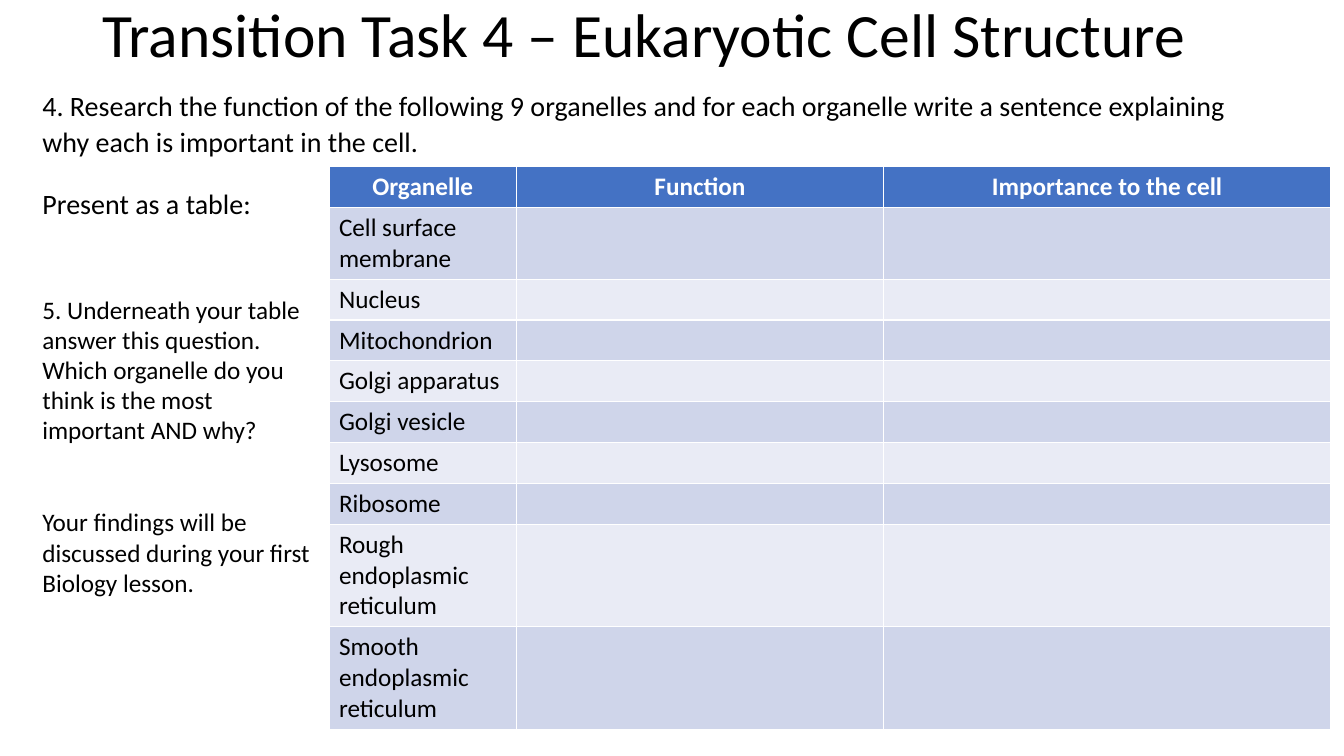
from pptx import Presentation
from pptx.dml.color import RGBColor
from pptx.enum.text import MSO_ANCHOR, PP_ALIGN
from pptx.util import Pt

MIDDLE, TOP = MSO_ANCHOR.MIDDLE, MSO_ANCHOR.TOP
LEFT, CENTER = PP_ALIGN.LEFT, PP_ALIGN.CENTER
FONT = "Calibri"
COLORS = {
    "text": "000000",
    "header_text": "FFFFFF",
    "header": "4472C4",
    "odd_row": "CFD5EA",
    "even_row": "E9EBF5",
}


def write_text(paragraph, text, size=18, color="text", bold=False, align=LEFT,
               line_spacing=1.0, before=0, after=0):
    paragraph.alignment = align
    paragraph.line_spacing = line_spacing
    paragraph.space_before = Pt(before)
    paragraph.space_after = Pt(after)
    run = paragraph.add_run()
    run.text = text
    run.font.name = FONT
    run.font.size = Pt(size)
    run.font.bold = bold
    run.font.color.rgb = RGBColor.from_string(COLORS[color])


def add_text_frame(slide, left, top, width, height, anchor=TOP):
    box = slide.shapes.add_textbox(Pt(left), Pt(top), Pt(width), Pt(height))
    box.text_frame.word_wrap = True
    box.text_frame.vertical_anchor = anchor
    return box.text_frame


presentation = Presentation()
presentation.slide_width = Pt(960)
presentation.slide_height = Pt(540)
slide = presentation.slides.add_slide(presentation.slide_layouts[6])

title = add_text_frame(slide, 66, -25.2, 828, 104.4, anchor=MIDDLE)
write_text(title.paragraphs[0], "Transition Task 4 – Eukaryotic Cell Structure",
           size=44, line_spacing=0.9)

task = add_text_frame(slide, 23.2, 58.3, 870.5, 342.7)
task_format = {"size": 20, "line_spacing": 1.07, "before": 10, "after": 8}
write_text(task.paragraphs[0],
           "4. Research the function of the following 9 organelles and for each "
           "organelle write a sentence explaining why each is important in the cell.",
           **task_format)
write_text(task.add_paragraph(), "Present as a table:", **task_format)

headings = ["Organelle", "Function", "Importance to the cell"]
column_widths = [134, 262, 319.7]
organelles = [
    ("Cell surface membrane", 2),
    ("Nucleus", 1),
    ("Mitochondrion", 1),
    ("Golgi apparatus", 1),
    ("Golgi vesicle", 1),
    ("Lysosome", 1),
    ("Ribosome", 1),
    ("Rough endoplasmic reticulum", 3),
    ("Smooth endoplasmic reticulum", 3),
]
line_height, cell_padding = 22, 7.2
row_heights = [line_height * lines + cell_padding
               for lines in [1] + [lines for name, lines in organelles]]

table = slide.shapes.add_table(len(row_heights), len(headings), Pt(235), Pt(119),
                               Pt(sum(column_widths)), Pt(sum(row_heights))).table
for column, width in zip(table.columns, column_widths):
    column.width = Pt(width)
for row_index, (row, height) in enumerate(zip(table.rows, row_heights)):
    row.height = Pt(height)
    fill_name = "odd_row" if row_index % 2 else "even_row"
    for cell in row.cells:
        cell.fill.solid()
        cell.fill.fore_color.rgb = RGBColor.from_string(
            COLORS[fill_name if row_index else "header"])

for column_index, heading in enumerate(headings):
    write_text(table.cell(0, column_index).text_frame.paragraphs[0], heading,
               color="header_text", bold=True, align=CENTER)
for row_index, (name, lines) in enumerate(organelles, start=1):
    write_text(table.cell(row_index, 0).text_frame.paragraphs[0], name)

question = add_text_frame(slide, 23.2, 184.3, 211.7, 290.9)
question.margin_top = Pt(3.6 + line_height)
write_text(question.paragraphs[0], "5. Underneath your table answer this question.")
write_text(question.add_paragraph(),
           "Which organelle do you think is the most important AND why?")
write_text(question.add_paragraph(),
           "Your findings will be discussed during your first Biology lesson.",
           before=2 * line_height)

presentation.save("out.pptx")
